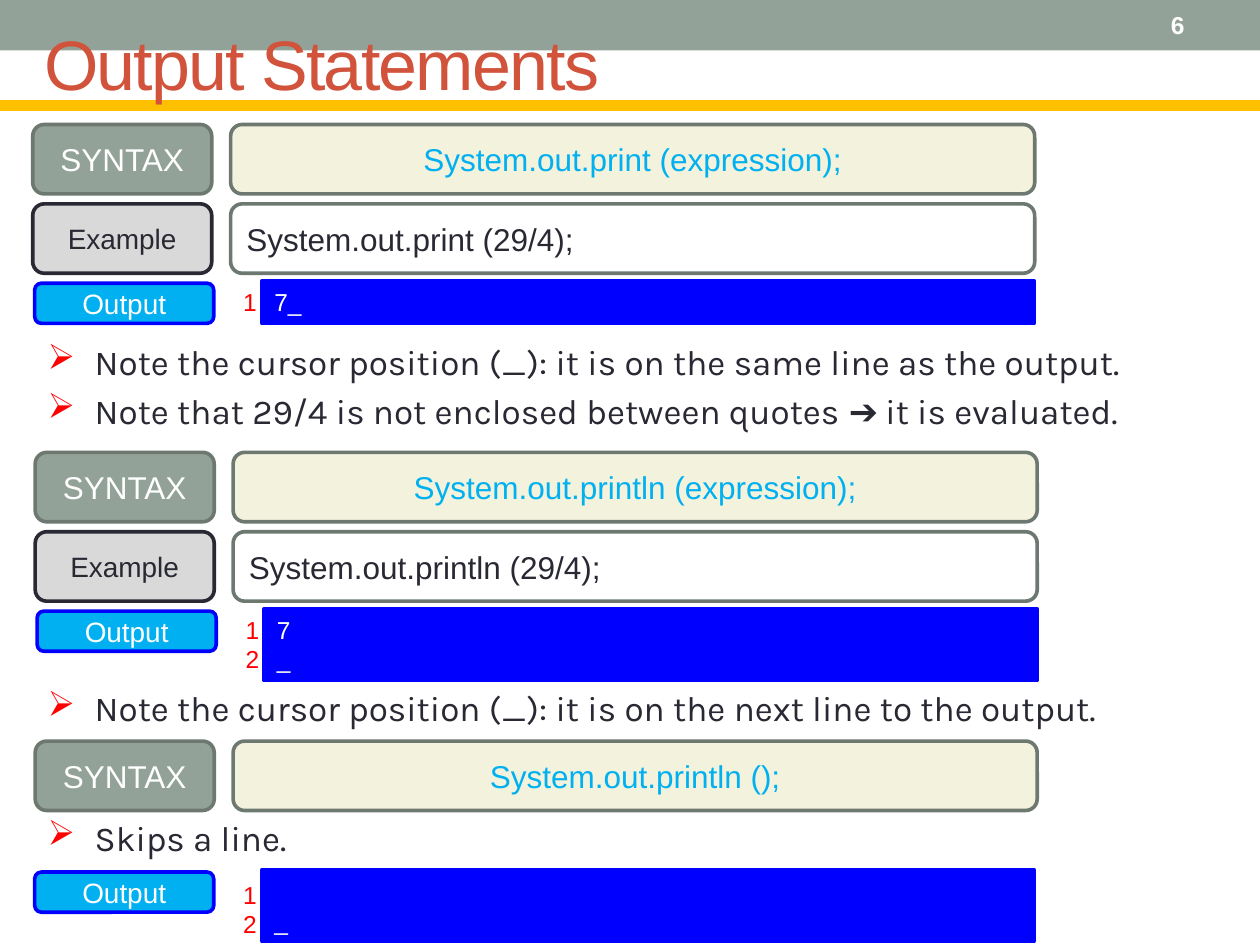
from dataclasses import dataclass
from lxml.etree import SubElement
from pptx import Presentation
from pptx.dml.color import RGBColor
from pptx.enum.shapes import MSO_CONNECTOR, MSO_SHAPE
from pptx.enum.text import MSO_ANCHOR, PP_ALIGN
from pptx.oxml.ns import qn
from pptx.util import Cm, Pt

LEFT, MID = PP_ALIGN.LEFT, PP_ALIGN.CENTER
TOP, CENTRE, BASE = MSO_ANCHOR.TOP, MSO_ANCHOR.MIDDLE, MSO_ANCHOR.BOTTOM
SAGE, EDGE, CREAM, INK = "93A299", "6D7871", "F3F2DC", "292934"
SKY, BLUE, RED, WHITE = "00B0F0", "0000FF", "FF0000", "FFFFFF"
WIDE, TALL, STEP, GAP = 3.61, 1.4, 1.6, 3.99  # label size, row step, code offset


@dataclass
class Style:
    fill: str
    line: str
    ink: str
    size: int = 18
    align: PP_ALIGN = MID
    anchor: MSO_ANCHOR = CENTRE
    kind: MSO_SHAPE = MSO_SHAPE.ROUNDED_RECTANGLE
    width: float = 2.08


@dataclass
class Pair:
    x: float
    y: float
    code: str
    demo: str = ""


@dataclass
class Result:
    x: float
    y: float
    rows: list[str]
    lines: list[str]
    high: float
    anchor: MSO_ANCHOR = TOP
    drop: float = 0


@dataclass
class Note:
    y: float
    text: str


SYNTAX = Style(SAGE, EDGE, WHITE)
CODE = Style(CREAM, EDGE, SKY)
LABEL = Style("D9D9D9", INK, INK, 16)
DEMO = Style(WHITE, EDGE, INK, align=LEFT)
OUTPUT = Style(SKY, BLUE, WHITE, 16)

PAIRS = [
    Pair(0.66, 2.51, "System.out.print (expression);", "System.out.print (29/4);"),
    Pair(0.71, 9.12, "System.out.println (expression);", "System.out.println (29/4);"),
    Pair(0.71, 14.94, "System.out.println ();"),
]
RESULTS = [
    Result(0.66, 5.66, ["1"], ["7_"], 0.86),
    Result(0.71, 12.27, ["1", "2"], ["7", "_"], 1.45),
    Result(0.66, 17.53, ["1", "2"], ["_"], 1.45, BASE, 0.08),
]
NOTES = [
    Note(6.73, "Note the cursor position (_): it is on the same line as the output."),
    Note(7.72, "Note that 29/4 is not enclosed between quotes ➔ it is evaluated."),
    Note(13.72, "Note the cursor position (_): it is on the next line to the output."),
    Note(16.33, "Skips a line."),
]


def hue(code: str) -> RGBColor:
    return RGBColor.from_string(code)


def write(frame, lines: list[str], size: int, ink: str, align=LEFT,
          anchor=TOP, face="Arial", bold=False) -> None:
    frame.word_wrap = True
    frame.vertical_anchor = anchor
    for i, line in enumerate(lines):
        para = frame.add_paragraph() if i else frame.paragraphs[0]
        para.add_run().text = line
        para.alignment = align
        font = para.font
        font.name, font.size, font.bold = face, Pt(size), bold
        font.color.rgb = hue(ink)


def label(slide, x: float, y: float, w: float, h: float,
          lines: list[str], size: int, ink: str, **look):
    box = slide.shapes.add_textbox(Cm(x), Cm(y), Cm(w), Cm(h))
    write(box.text_frame, lines, size, ink, **look)
    return box.text_frame


def block(slide, x: float, y: float, w: float, h: float,
          lines: list[str], style: Style) -> None:
    box = slide.shapes.add_shape(style.kind, Cm(x), Cm(y), Cm(w), Cm(h))
    box.shadow.inherit = False
    box.fill.solid()
    box.fill.fore_color.rgb = hue(style.fill)
    box.line.color.rgb = hue(style.line)
    box.line.width = Pt(style.width)
    write(box.text_frame, lines, style.size, style.ink, style.align, style.anchor)


def draw_pair(slide, pair: Pair) -> None:
    rows = [("SYNTAX", SYNTAX, pair.code, CODE)]
    if pair.demo:
        rows.append(("Example", LABEL, pair.demo, DEMO))
    for i, (name, left, text, right) in enumerate(rows):
        y = pair.y + i * STEP
        block(slide, pair.x, y, WIDE, TALL, [name], left)
        block(slide, pair.x + GAP, y, 16.21, TALL, [text], right)


def draw_result(slide, res: Result) -> None:
    screen = Style(BLUE, BLUE, WHITE, 14, LEFT, res.anchor, MSO_SHAPE.RECTANGLE, 2.25)
    block(slide, res.x + 4.62, res.y, 15.57, res.high, res.lines, screen)
    frame = label(slide, res.x + GAP, res.y + res.drop, 0.46, res.high,
                  res.rows, 14, RED)
    frame.margin_right = 0
    block(slide, res.x + 0.04, res.y + 0.05, WIDE, 0.81, ["Output"], OUTPUT)


def draw_note(slide, note: Note) -> None:
    frame = label(slide, 0.71, note.y, 24, 1.12, [note.text], 20, INK, face="Karla")
    props = frame.paragraphs[0]._p.get_or_add_pPr()
    props.set("marL", str(Cm(0.95)))
    props.set("indent", str(-Cm(0.95)))
    tint = SubElement(props, qn("a:buClr"))
    SubElement(tint, qn("a:srgbClr")).set("val", RED)
    mark = SubElement(props, qn("a:buChar"))
    mark.set("char", "➢")
    # Bullet parts come before the font defaults
    props.insert(0, mark)
    props.insert(0, tint)


def draw_head(slide) -> None:
    band = slide.shapes.add_shape(MSO_SHAPE.RECTANGLE, 0, 0, Cm(25.4), Cm(1.02))
    band.shadow.inherit = False
    band.fill.solid()
    band.fill.fore_color.rgb = hue(SAGE)
    band.line.fill.background()
    rule = slide.shapes.add_connector(
        MSO_CONNECTOR.STRAIGHT, 0, Cm(2.13), Cm(25.4), Cm(2.13))
    rule.line.color.rgb = hue("FFC000")
    rule.line.width = Pt(6)
    SubElement(rule._element.spPr, qn("a:effectLst"))
    title = label(slide, 0.64, 0.43, 24.05, 1.65, ["Output Statements"],
                  40, "D2533C", anchor=CENTRE)
    title.paragraphs[0].runs[0]._r.get_or_add_rPr().set("spc", "-100")
    label(slide, 21.16, 0.05, 2.97, 0.91, ["6"], 14, WHITE,
          align=PP_ALIGN.RIGHT, anchor=CENTRE, bold=True)


def main() -> None:
    deck = Presentation()
    deck.slide_width, deck.slide_height = Cm(25.4), Cm(19.05)
    slide = deck.slides.add_slide(deck.slide_layouts[6])
    draw_head(slide)
    # Syntax and example rows, then their output, then the remarks
    for pair in PAIRS:
        draw_pair(slide, pair)
    for res in RESULTS:
        draw_result(slide, res)
    for note in NOTES:
        draw_note(slide, note)
    deck.save("out.pptx")


if __name__ == "__main__":
    main()
